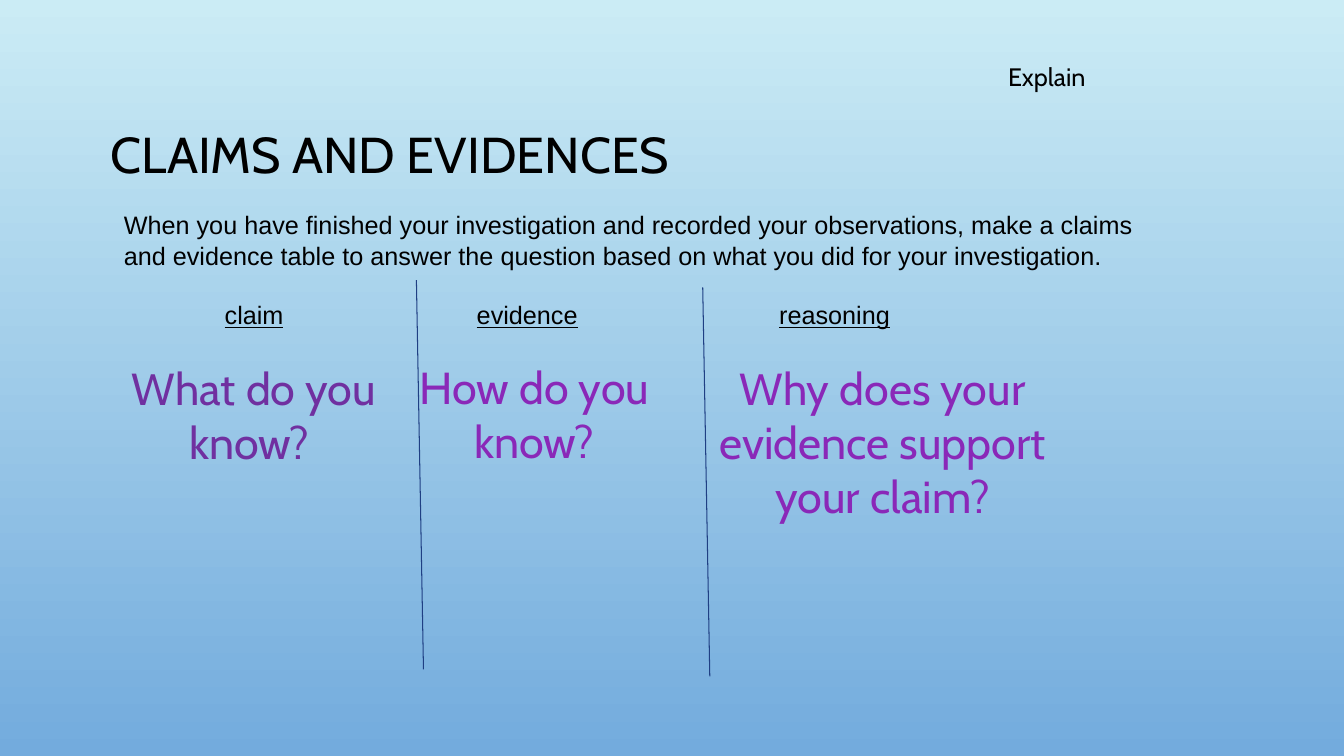
from dataclasses import dataclass

from lxml.etree import SubElement
from pptx import Presentation
from pptx.dml.color import RGBColor
from pptx.enum.shapes import MSO_CONNECTOR as Connector
from pptx.enum.text import MSO_ANCHOR as Anchor, PP_ALIGN as Align
from pptx.oxml.ns import qn
from pptx.slide import Slide
from pptx.text.text import TextFrame, _Paragraph as Paragraph
from pptx.util import Inches, Pt

COLORS = {
    "sky": "CBECF5",
    "deep_sky": "73ABDD",
    "ink": "000000",
    "claim": "7030A0",
    "question": "8A28B8",
    "divider": "1F3F83",
}
# Column headings and their tab stops, in inches from the text edge
HEADINGS = {"claim": 1.0, "evidence": 3.5, "reasoning": 6.5}
DIVIDER_LEAN, DIVIDER_HEIGHT = 0.07, 3.86


@dataclass
class Caption:
    lines: list[str]
    left: float
    top: float
    width: float
    height: float
    size: int
    color: str = "ink"
    font: str = "Cabin"
    align: Align = Align.LEFT
    anchor: Anchor = Anchor.TOP
    spacing: float = 1.0


@dataclass
class Divider:
    left: float
    top: float


TITLE = Caption(["CLAIMS AND EVIDENCES"], 1, 0.68, 11.33, 1.75, 36,
                anchor=Anchor.MIDDLE, spacing=0.9)
STAGE = Caption(["Explain"], 9.9, 0.56, 1.8, 0.4, 18)
INSTRUCTIONS = Caption(
    ["When you have finished your investigation and recorded your observations, "
     "make a claims and evidence table to answer the question based on what you "
     "did for your investigation."],
    1.13, 2.03, 10.58, 1.92, 18, font="Arial")
QUESTIONS = [
    Caption(["What do you know? "], 0.88, 3.53, 3.28, 1.18, 32, "claim", align=Align.CENTER),
    Caption(["How do you", "know?"], 3.21, 3.52, 4.18, 1.18, 32, "question", align=Align.CENTER),
    Caption(["Why does your evidence support your claim?"], 7, 3.53, 3.51, 2.02, 32,
            "question", align=Align.CENTER),
]
DIVIDERS = [Divider(4.13, 2.78), Divider(6.97, 2.85)]


def rgb(name: str) -> RGBColor:
    return RGBColor.from_string(COLORS[name])


def style(paragraph: Paragraph, caption: Caption) -> None:
    paragraph.alignment = caption.align
    paragraph.line_spacing = caption.spacing
    paragraph.font.name = caption.font
    paragraph.font.size = Pt(caption.size)
    paragraph.font.color.rgb = rgb(caption.color)


def add_caption(slide: Slide, caption: Caption) -> TextFrame:
    frame = slide.shapes.add_textbox(
        Inches(caption.left), Inches(caption.top),
        Inches(caption.width), Inches(caption.height)).text_frame
    frame.word_wrap = True
    frame.vertical_anchor = caption.anchor
    frame.text = "\n".join(caption.lines)
    for paragraph in frame.paragraphs:
        style(paragraph, caption)
    return frame


def add_headings(frame: TextFrame) -> None:
    row = frame.add_paragraph()
    row.space_before = Pt(21)
    tabs = SubElement(row._p.get_or_add_pPr(), qn("a:tabLst"))
    for heading, stop in HEADINGS.items():
        SubElement(tabs, qn("a:tab"), pos=str(Inches(stop)), algn="l")
        row.add_run().text = "\t"
        word = row.add_run()
        word.text = heading
        word.font.underline = True
    style(row, INSTRUCTIONS)


def add_divider(slide: Slide, divider: Divider) -> None:
    line = slide.shapes.add_connector(
        Connector.STRAIGHT, Inches(divider.left), Inches(divider.top),
        Inches(divider.left + DIVIDER_LEAN), Inches(divider.top + DIVIDER_HEIGHT))
    line.line.color.rgb = rgb("divider")
    line.line.width = Pt(0.75)
    SubElement(line._element.spPr, qn("a:effectLst"))


def main() -> None:
    deck = Presentation()
    deck.slide_width, deck.slide_height = Inches(13.33), Inches(7.5)
    slide = deck.slides.add_slide(deck.slide_layouts[6])

    # Background, light at the top
    sky = slide.background.fill
    sky.gradient()
    sky.gradient_angle = 270
    for stop, name in zip(sky.gradient_stops, ("sky", "deep_sky")):
        stop.color.rgb = rgb(name)

    # Title, stage and instructions
    add_caption(slide, TITLE)
    add_caption(slide, STAGE)
    add_headings(add_caption(slide, INSTRUCTIONS))

    # Columns
    for divider in DIVIDERS:
        add_divider(slide, divider)
    for question in QUESTIONS:
        add_caption(slide, question)

    deck.save("out.pptx")


if __name__ == "__main__":
    main()
